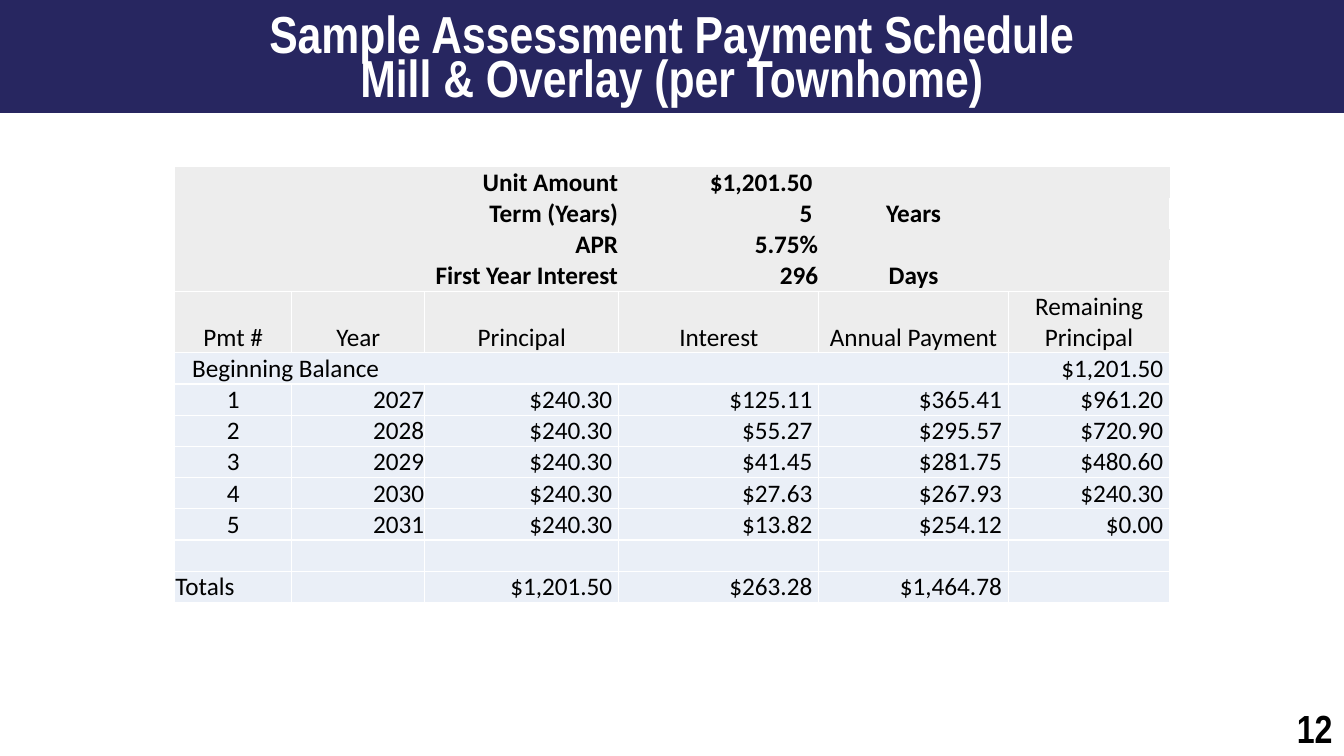
from lxml.etree import SubElement
from pptx import Presentation
from pptx.dml.color import RGBColor
from pptx.enum.shapes import MSO_SHAPE
from pptx.enum.text import MSO_ANCHOR, PP_ALIGN
from pptx.oxml.ns import qn
from pptx.util import Pt

COLORS = {"navy": "272660", "white": "FFFFFF", "black": "000000",
          "gray": "EDEDED", "pale": "EAEFF7"}
LEFT, MID, RIGHT = PP_ALIGN.LEFT, PP_ALIGN.CENTER, PP_ALIGN.RIGHT


def write(frame, text, size, font, color, bold, align, space=1.0):
    frame.text = text
    for para in frame.paragraphs:
        para.alignment = align
        para.line_spacing = space
        for run in para.runs:
            run.font.size = Pt(size)
            run.font.name = font
            run.font.bold = bold
            run.font.color.rgb = RGBColor.from_string(COLORS[color])


def edge(cell, shown):
    """Draw white lines on the sides in shown and clear the other sides."""
    props = cell._tc.get_or_add_tcPr()
    for spot, side in enumerate("LRTB"):
        line = props.makeelement(qn("a:ln" + side), {"w": str(Pt(1))})
        props.insert(spot, line)
        if side in shown:
            fill = SubElement(line, qn("a:solidFill"))
            SubElement(fill, qn("a:srgbClr"), val=COLORS["white"])
        else:
            SubElement(line, qn("a:noFill"))


deck = Presentation()
deck.slide_width, deck.slide_height = Pt(960), Pt(540)
slide = deck.slides.add_slide(deck.slide_layouts[6])
shapes = slide.shapes

# Title band
band = shapes.add_shape(MSO_SHAPE.RECTANGLE, 0, 0, Pt(960), Pt(80.6))
band.shadow.inherit = False
band.fill.solid()
band.fill.fore_color.rgb = RGBColor.from_string(COLORS["navy"])
band.line.fill.background()

title = shapes.add_textbox(Pt(101.5), Pt(9.4), Pt(757), Pt(70.6)).text_frame
title.word_wrap = True
title.vertical_anchor = MSO_ANCHOR.MIDDLE
write(title, "Sample Assessment Payment Schedule\nMill & Overlay (per Townhome)",
      37.2, "Arial Narrow", "white", True, MID, 0.7)

# Page number
page = shapes.add_textbox(Pt(919.3), Pt(503.3), Pt(40.7), Pt(36.7)).text_frame
page.word_wrap = True
write(page, "12", 28, "Arial Narrow", "black", True, LEFT, 0.9)

# Payment schedule
rows = [
    ["Unit Amount", "", "", "$1,201.50", "", ""],
    ["Term (Years)", "", "", "5", "Years", ""],
    ["APR", "", "", "5.75%", "", ""],
    ["First Year Interest", "", "", "296", "Days", ""],
    ["Pmt #", "Year", "Principal", "Interest", "Annual Payment",
     "Remaining Principal"],
    ["Beginning Balance", "", "", "", "", "$1,201.50"],
    ["1", "2027", "$240.30", "$125.11", "$365.41", "$961.20"],
    ["2", "2028", "$240.30", "$55.27", "$295.57", "$720.90"],
    ["3", "2029", "$240.30", "$41.45", "$281.75", "$480.60"],
    ["4", "2030", "$240.30", "$27.63", "$267.93", "$240.30"],
    ["5", "2031", "$240.30", "$13.82", "$254.12", "$0.00"],
    ["", "", "", "", "", ""],
    ["Totals", "", "$1,201.50", "$263.28", "$1,464.78", ""],
]
HEAD = 4
widths = [83.6, 95, 138.6, 142.9, 135.4, 115.3]
high = 22.3

grid = shapes.add_table(len(rows), len(widths), Pt(124.8), Pt(119.1),
                        Pt(sum(widths)), Pt(high * 14)).table
grid.first_row = grid.horz_banding = False
for col, width in zip(grid.columns, widths):
    col.width = Pt(width)

for r, row in enumerate(rows):
    grid.rows[r].height = Pt(high * 2 - 0.8 if r == HEAD else high)
    for c, text in enumerate(row):
        cell = grid.cell(r, c)
        if r < HEAD:
            align = MID if c == 4 else RIGHT
        elif r == HEAD:
            align = MID
        elif c == 0:
            align = MID if text.isdigit() else LEFT
        else:
            align = RIGHT
        money = text.startswith("$") or (r, c) == (1, 3)
        cell.margin_left = Pt(12.5 if text == "Beginning Balance" else 0.5)
        cell.margin_right = Pt(4.6 if money else 0.5)
        cell.margin_top, cell.margin_bottom = Pt(0.3), 0
        cell.vertical_anchor = MSO_ANCHOR.BOTTOM
        write(cell.text_frame, text, 18, "Calibri", "black", r < HEAD, align)
        cell.fill.solid()
        cell.fill.fore_color.rgb = RGBColor.from_string(
            COLORS["gray" if r <= HEAD else "pale"])
        if r < HEAD:
            sides = {0: "T", HEAD - 1: "B"}.get(r, "")
            sides += {0: "L", 5: "R"}.get(c, "")
        else:
            sides = "LRTB"
        edge(cell, sides)

for r in range(HEAD):
    grid.cell(r, 0).merge(grid.cell(r, 2))
for r in (0, 2):
    grid.cell(r, 4).merge(grid.cell(r, 5))
grid.cell(5, 0).merge(grid.cell(5, 4))

deck.save("out.pptx")
